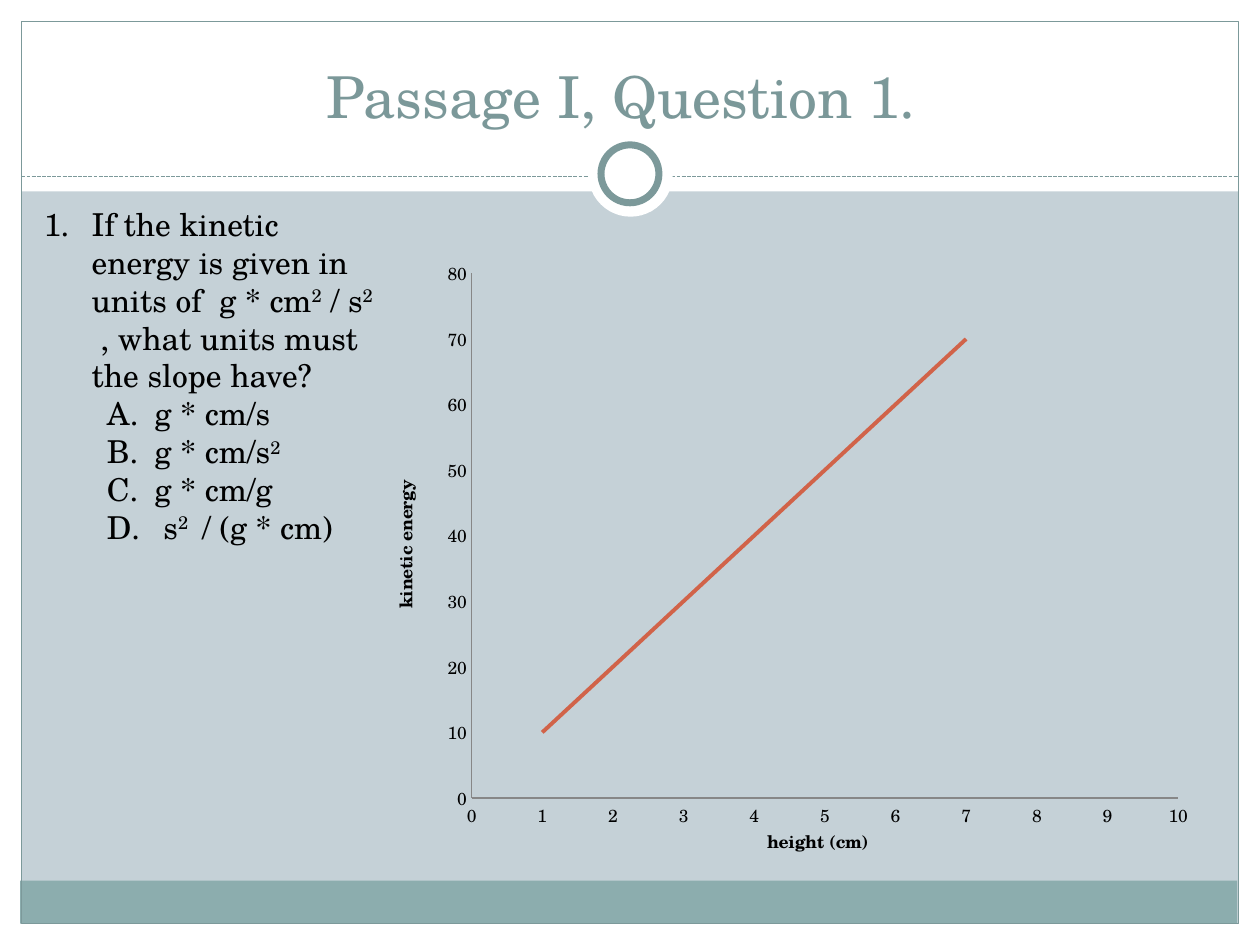
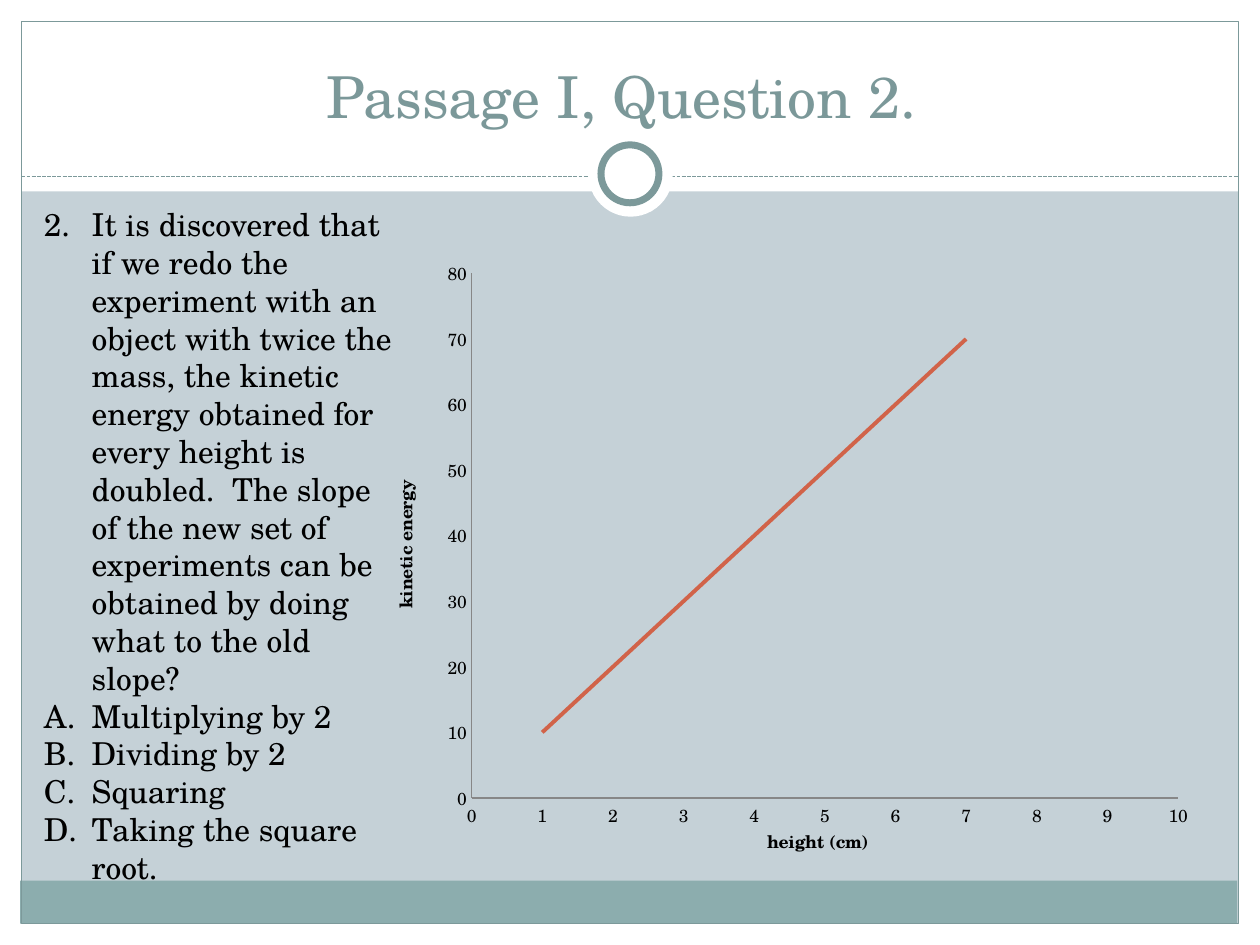
"""Build two physics question slides, each pairing a question with a line chart."""
from dataclasses import dataclass

from lxml.etree import SubElement
from pptx import Presentation
from pptx.chart.data import XyChartData
from pptx.dml.color import RGBColor
from pptx.enum.chart import XL_CHART_TYPE, XL_TICK_MARK
from pptx.enum.dml import MSO_LINE
from pptx.enum.shapes import MSO_CONNECTOR, MSO_SHAPE
from pptx.enum.text import MSO_ANCHOR, MSO_AUTO_SIZE, PP_ALIGN
from pptx.oxml import parse_xml
from pptx.oxml.ns import nsdecls, qn
from pptx.util import Inches, Pt


@dataclass(frozen=True)
class Theme:
    font: str = "TeX Gyre Schola"
    background: RGBColor = RGBColor(0xC5, 0xD1, 0xD7)
    white: RGBColor = RGBColor(0xFF, 0xFF, 0xFF)
    footer: RGBColor = RGBColor(0x8C, 0xAD, 0xAE)
    frame: RGBColor = RGBColor(0x7C, 0x99, 0x9A)
    title: RGBColor = RGBColor(0x7B, 0x98, 0x99)
    text: RGBColor = RGBColor(0, 0, 0)
    axis: RGBColor = RGBColor(0x87, 0x87, 0x87)
    series: RGBColor = RGBColor(0xD1, 0x63, 0x49)
    title_size: int = 33
    body_size: int = 18
    chart_size: int = 10
    hairline: float = 0.75
    series_width: float = 2.25
    ring_width: float = 4


class Deck:
    def __init__(self, theme):
        self.theme = theme
        self.presentation = Presentation()
        self.presentation.slide_width = Inches(10)
        self.presentation.slide_height = Inches(7.5)
        self.layout = self.presentation.slide_layouts[5]
        fill = self.presentation.slide_master.background.fill
        fill.solid()
        fill.fore_color.rgb = theme.background
        self.slide = None

    def add_slide(self, title):
        self.slide = self.presentation.slides.add_slide(self.layout)
        shape = self.slide.shapes.title
        shape.left, shape.top = Inches(0.33), Inches(0.25)
        shape.width, shape.height = Inches(9.33), Inches(0.83)
        frame = shape.text_frame
        frame.text = title
        frame.auto_size = MSO_AUTO_SIZE.NONE
        frame.vertical_anchor = MSO_ANCHOR.BOTTOM
        paragraph = frame.paragraphs[0]
        paragraph.alignment = PP_ALIGN.CENTER
        self.style(paragraph.runs[0].font, self.theme.title_size, self.theme.title)

    def style(self, font, size, color):
        font.name = self.theme.font
        font.size = Pt(size)
        font.color.rgb = color

    def add_shape(self, kind, box, fill=None, line_width=None):
        shape = self.slide.shapes.add_shape(kind, *map(Inches, box))
        shape.shadow.inherit = False
        if fill is None:
            shape.fill.background()
        else:
            shape.fill.solid()
            shape.fill.fore_color.rgb = fill
        if line_width is None:
            shape.line.fill.background()
        else:
            shape.line.color.rgb = self.theme.frame
            shape.line.width = Pt(line_width)

    def add_dashed_rule(self, left, right, top):
        rule = self.slide.shapes.add_connector(
            MSO_CONNECTOR.STRAIGHT, Inches(left), Inches(top), Inches(right), Inches(top))
        rule.line.color.rgb = self.theme.frame
        rule.line.width = Pt(self.theme.hairline)
        rule.line.dash_style = MSO_LINE.SQUARE_DOT
        SubElement(rule._element.spPr, qn("a:effectLst"))

    def move_drawing_to_layout(self):
        drawing = [shape for shape in self.slide.shapes if not shape.is_placeholder]
        for number, shape in enumerate(drawing, start=100):
            shape._element.xpath(".//p:cNvPr")[0].set("id", str(number))
            self.layout.shapes._element.append(shape._element)

    def add_frame(self):
        theme = self.theme
        edge = 0.17
        for box in (
            (0, 7.5 - edge, 10, edge),
            (0, 0, 10, 1.52),
            (0, 0, edge, 7.5),
            (10 - edge, 0, edge, 7.5),
        ):
            self.add_shape(MSO_SHAPE.RECTANGLE, box, theme.white)
        self.add_shape(MSO_SHAPE.RECTANGLE, (0.16, 6.99, 9.66, 0.34), theme.footer)
        self.add_shape(MSO_SHAPE.RECTANGLE, (edge, edge, 9.66, 7.16), None, theme.hairline)
        self.add_dashed_rule(edge, 10 - edge, 1.4)
        self.add_shape(MSO_SHAPE.OVAL, (4.67, 1.05, 0.67, 0.67), theme.white)
        self.add_shape(MSO_SHAPE.OVAL, (4.77, 1.15, 0.46, 0.46), theme.white, theme.ring_width)
        self.move_drawing_to_layout()

    def format_axis(self, axis, title, maximum, step):
        axis.minimum_scale, axis.maximum_scale = 0, maximum
        axis.major_unit = step
        axis.has_major_gridlines = False
        axis.major_tick_mark = axis.minor_tick_mark = XL_TICK_MARK.NONE
        axis.tick_labels.number_format = "General"
        axis.tick_labels.number_format_is_linked = False
        axis.format.line.color.rgb = self.theme.axis
        axis.format.line.width = Pt(self.theme.hairline)
        axis.axis_title.text_frame.text = title
        font = axis.axis_title.text_frame.paragraphs[0].runs[0].font
        self.style(font, self.theme.chart_size, self.theme.text)
        font.bold = True

    def add_energy_chart(self):
        data = XyChartData()
        points = data.add_series("Series 1")
        for height in range(1, 8):
            points.add_data_point(height, 10 * height)
        chart = self.slide.shapes.add_chart(
            XL_CHART_TYPE.XY_SCATTER_LINES_NO_MARKERS,
            Inches(0.33), Inches(1.67), Inches(9.3), Inches(5.16), data).chart
        chart.has_legend = chart.has_title = False
        self.style(chart.font, self.theme.chart_size, self.theme.text)
        self.format_axis(chart.category_axis, "height (cm)", 10, 1)
        self.format_axis(chart.value_axis, "kinetic energy", 80, 10)
        plot = chart.plots[0]
        plot.vary_by_categories = False
        series = plot.series[0]
        series.smooth = False
        series.format.line.color.rgb = self.theme.series
        series.format.line.width = Pt(self.theme.series_width)
        self.place_plot(chart, x=0.367, y=0.097, w=0.603, h=0.807)

    def place_plot(self, chart, **fractions):
        plot_area = chart._chartSpace.chart.plotArea
        for layout in plot_area.findall(qn("c:layout")):
            plot_area.remove(layout)
        settings = {"layoutTarget": "inner", "xMode": "edge", "yMode": "edge", **fractions}
        items = "".join(f'<c:{name} val="{value}"/>' for name, value in settings.items())
        plot_area.insert(0, parse_xml(
            f'<c:layout {nsdecls("c")}><c:manualLayout>{items}</c:manualLayout></c:layout>'))

    def add_question(self, width, height, question, answers, numbering, answer_indent):
        box = self.slide.shapes.add_textbox(
            Inches(0.25), Inches(1.58), Inches(width), Inches(height))
        frame = box.text_frame
        frame.word_wrap = True
        frame.auto_size = MSO_AUTO_SIZE.SHAPE_TO_FIT_TEXT
        self.fill_item(frame.paragraphs[0], question, 0.38, numbering)
        for answer in answers:
            self.fill_item(frame.add_paragraph(), answer, answer_indent, "alphaUcPeriod")

    def fill_item(self, paragraph, text, indent, numbering):
        paragraph.level = 1 if indent > 0.5 else 0
        properties = paragraph._p.get_or_add_pPr()
        properties.set("marL", str(Inches(indent)))
        properties.set("indent", str(Inches(-0.38)))
        if numbering:
            SubElement(properties, qn("a:buAutoNum")).set("type", numbering)
        for position, part in enumerate(text.split("^")):
            run = paragraph.add_run()
            run.text = part
            self.style(run.font, self.theme.body_size, self.theme.text)
            if position % 2:
                run.font._element.set("baseline", "30000")


def main():
    deck = Deck(Theme())
    questions = (
        dict(
            width=2.83, height=3.13, numbering="arabicPeriod", answer_indent=0.88,
            question="If the kinetic energy is given in units of  g * cm^2^ / s^2 ^"
                     " , what units must the slope have?",
            answers=("g * cm/s", "g * cm/s^2", "g * cm/g", " s^2 ^ / (g * cm)"),
        ),
        dict(
            width=3, height=5.55, numbering=None, answer_indent=0.38,
            question="2.\tIt is discovered that if we redo the experiment with an object "
                     "with twice the mass, the kinetic energy obtained for every height is "
                     "doubled.  The slope of the new set of experiments can be obtained by "
                     "doing what to the old slope?",
            answers=("Multiplying by 2", "Dividing by 2", "Squaring", "Taking the square root."),
        ),
    )
    for number, question in enumerate(questions, start=1):
        deck.add_slide(f"Passage I, Question {number}. ")
        if number == 1:
            deck.add_frame()
        deck.add_energy_chart()
        deck.add_question(**question)
    deck.presentation.save("out.pptx")


if __name__ == "__main__":
    main()
